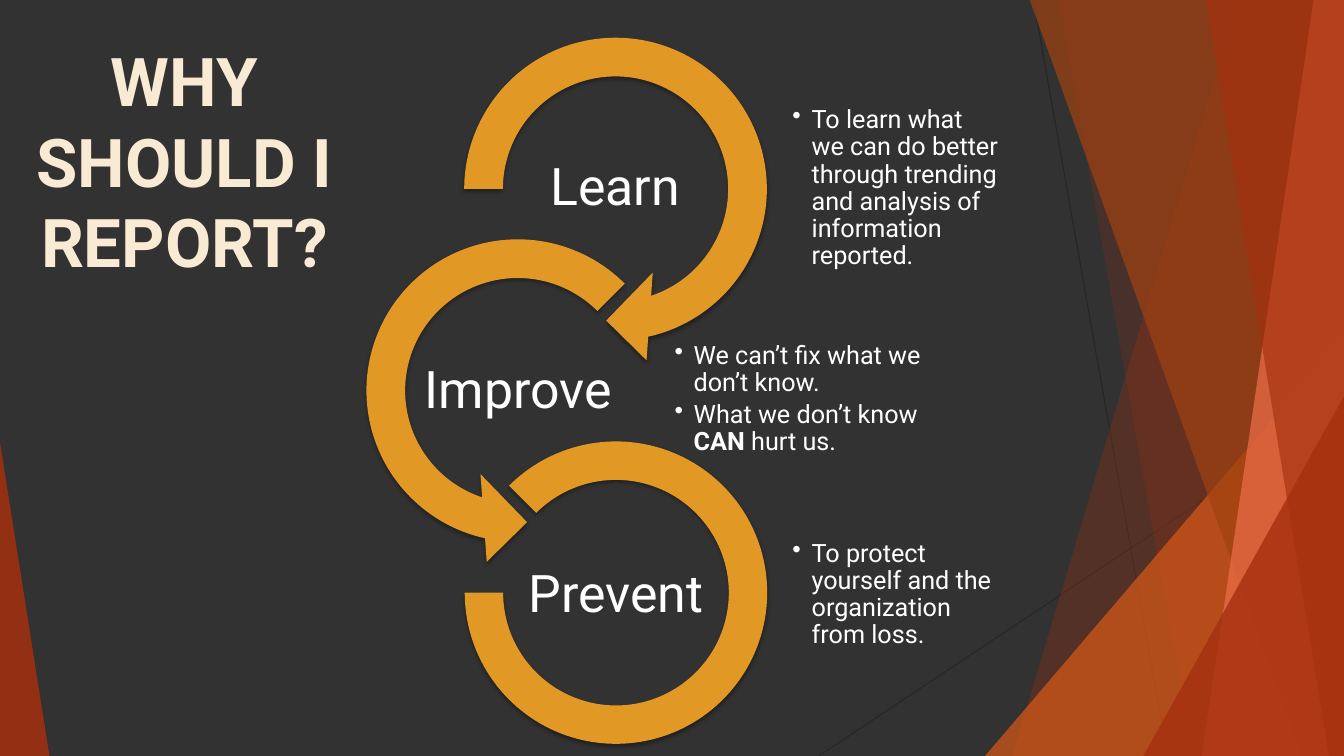
"""Build the slide on why to report: learn, improve, prevent."""
from lxml.etree import SubElement
from pptx import Presentation
from pptx.dml.color import RGBColor
from pptx.enum.shapes import MSO_CONNECTOR, MSO_SHAPE as SHAPE
from pptx.enum.text import MSO_ANCHOR, MSO_AUTO_SIZE, PP_ALIGN
from pptx.oxml.ns import qn
from pptx.util import Inches, Pt

RIGHT, TOP, BOTTOM = 13.33, -0.01, 7.5


def paint(fill, color):
    """Make a fill solid in a hex colour."""
    fill.solid()
    fill.fore_color.rgb = RGBColor.from_string(color)


def add_text(box, lines, size, color="FFFFFF", bold=False, inset=None, bulleted=False):
    """Add a text box; words between asterisks are bold."""
    shape = slide.shapes.add_textbox(*map(Inches, box))
    frame = shape.text_frame
    frame.word_wrap = True
    if inset is not None:
        frame.vertical_anchor = MSO_ANCHOR.MIDDLE
        frame.margin_left = frame.margin_right = Inches(inset)
        frame.margin_top = frame.margin_bottom = Inches(inset)
    for index, line in enumerate(lines):
        paragraph = frame.add_paragraph() if index else frame.paragraphs[0]
        if inset is not None:
            paragraph.line_spacing = 0.9
        if bulleted:
            paragraph.level = 1
            paragraph.space_after = Pt(3)
            properties = paragraph._p.get_or_add_pPr()
            properties.set("marL", str(Inches(0.19)))
            properties.set("indent", str(-Inches(0.19)))
            SubElement(properties, qn("a:buChar"), char="•")
        else:
            paragraph.alignment = PP_ALIGN.CENTER
        for part, words in enumerate(line.split("*")):
            run = paragraph.add_run()
            run.text = words
            run.font.name = "Roboto"
            run.font.size = Pt(size)
            run.font.bold = bold or part % 2 == 1
            paint(run.font.fill, color)
    return shape


presentation = Presentation()
presentation.slide_width = Inches(RIGHT)
presentation.slide_height = Inches(BOTTOM)
slide = presentation.slides.add_slide(presentation.slide_layouts[6])
paint(slide.background.fill, "323232")

for ends in [(10.25, 0, 11.58, BOTTOM), (RIGHT, 4.03, 8.12, BOTTOM)]:
    line = slide.shapes.add_connector(MSO_CONNECTOR.STRAIGHT, *map(Inches, ends))
    line.line.width = Pt(0.75)
    paint(line.line.fill, "262626")
    SubElement(line._element.spPr, qn("a:effectLst"))

# Facets with two numbers give the top and bottom of a slanted left edge;
# those with five give a triangle's box and the place of its apex.
facets = [
    ((12.28, 10.04), "A5300F", 30),
    ((10.5, 11.83), "A5300F", 20),
    ((9.77, 3.33, 3.56, 4.17, 1), "D55816", 72),
    ((10.21, 12.91), "A04210", 70),
    ((13.03, 11.92), "EE6E4A", 70),
    ((11.96, 13.18), "A5300F", 65),
    ((11.34, 3.93, 1.99, 3.57, 1), "A5300F", 80),
    ((0, 4.39, 0.49, 3.11, 0), "A5300F", 85),
]
for geometry, color, opacity in facets:
    if len(geometry) == 2:
        top_x, bottom_x = geometry
        corners = [(RIGHT, TOP), (RIGHT, BOTTOM), (bottom_x, BOTTOM)]
        builder = slide.shapes.build_freeform(Inches(top_x), Inches(TOP))
        builder.add_line_segments([(Inches(x), Inches(y)) for x, y in corners])
        facet = builder.convert_to_shape()
    else:
        *box, apex = geometry
        facet = slide.shapes.add_shape(SHAPE.ISOSCELES_TRIANGLE, *map(Inches, box))
        facet.adjustments[0] = apex
    paint(facet.fill, color)
    facet.line.fill.background()
    facet.shadow.inherit = False
    tint = facet._element.spPr.find(qn("a:solidFill"))[0]
    SubElement(tint, qn("a:alpha"), val=str(opacity * 1000))

steps = [
    ("Learn", (5.13, 1.39), SHAPE.CIRCULAR_ARROW, (4.36, 0.13, 3.49, 3.49),
     (0.11, 11.423, 45, 108, 0.125), (7.85, 1.17, 2.09, 1.4),
     ["To learn what we can do better through trending and analysis of information reported."]),
    ("Improve", (4.17, 3.4), SHAPE.LEFT_CIRCULAR_ARROW, (3.39, 2.13, 3.49, 3.49),
     (0.11, 11.423, 63, 189, 0.125), (6.68, 3.26, 2.99, 1.4),
     ["We can’t fix what we don’t know.", "What we don’t know *CAN* hurt us."]),
    ("Prevent", (5.14, 5.42), SHAPE.BLOCK_ARC, (4.61, 4.38, 3, 3),
     (135, 108, 0.127), (7.85, 5.2, 2.09, 1.4),
     ["To protect yourself and the organization from loss."]),
]
for name, name_corner, kind, ring_box, adjustments, reason_box, reasons in steps:
    ring = slide.shapes.add_shape(kind, *map(Inches, ring_box))
    for index, value in enumerate(adjustments):
        ring.adjustments[index] = value
    paint(ring.fill, "E19825")
    ring.line.fill.background()
    ring.shadow.inherit = False
    effects = ring._element.spPr.find(qn("a:effectLst"))
    shadow = SubElement(effects, qn("a:outerShdw"), blurRad=str(Pt(3)),
                        dist=str(Pt(2)), dir="5400000", rotWithShape="0")
    shade = SubElement(shadow, qn("a:srgbClr"), val="000000")
    SubElement(shade, qn("a:alpha"), val="35000")
    add_text(reason_box, reasons, 18, inset=0.01, bulleted=True)
    add_text((*name_corner, 1.94, 0.97), [name], 37, inset=0.03)

title = add_text((0.11, 0.34, 3.44, 2.52), ["WHY SHOULD I REPORT?"], 48, "F9EAD3", bold=True)
title.text_frame.auto_size = MSO_AUTO_SIZE.SHAPE_TO_FIT_TEXT

presentation.save("out.pptx")
